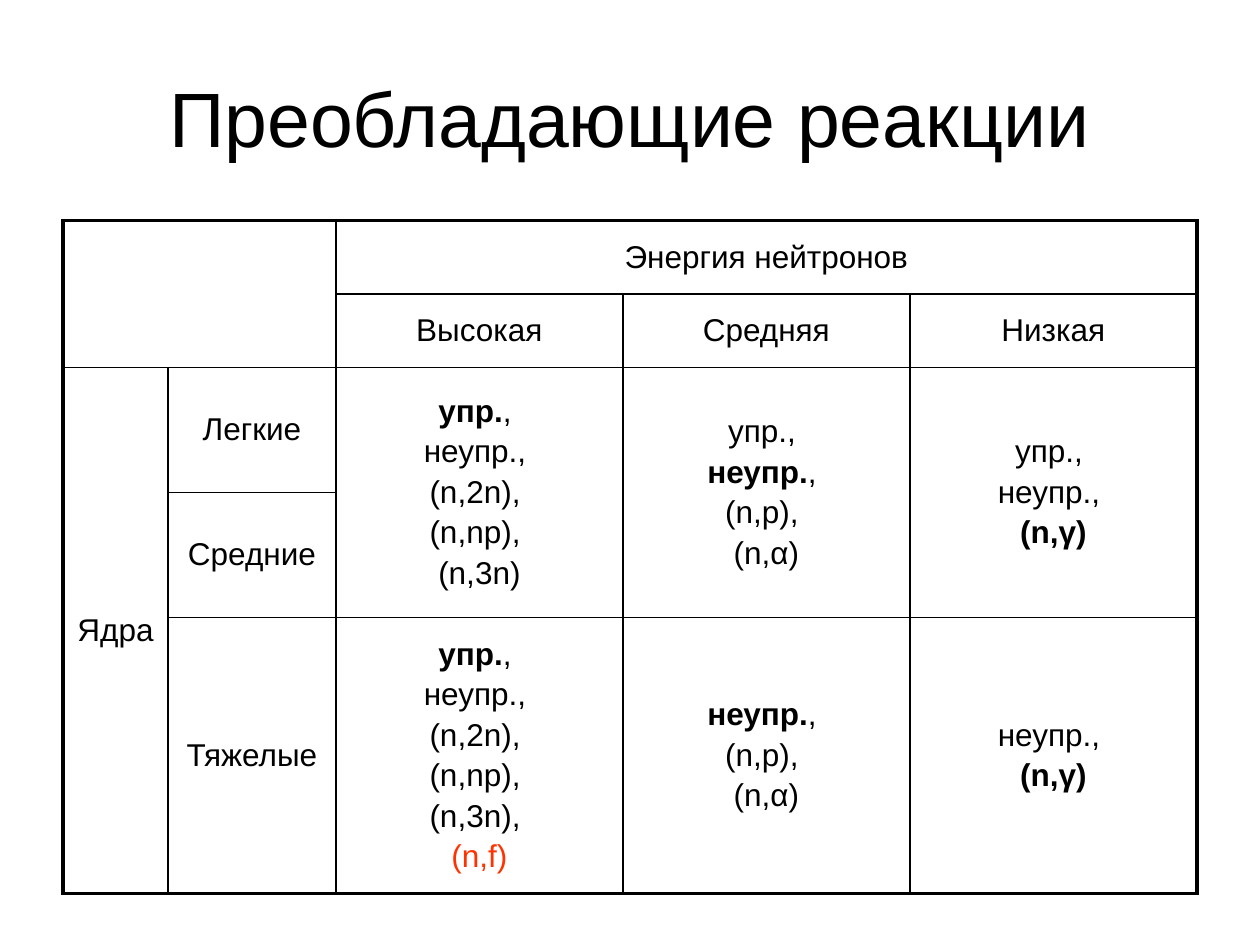
"""Build a slide with a table of prevailing neutron reactions."""
from lxml import etree
from pptx import Presentation
from pptx.dml.color import RGBColor
from pptx.enum import text
from pptx.oxml import ns
from pptx.util import Pt

BLACK = RGBColor(0x00, 0x00, 0x00)
RED = RGBColor(0xFF, 0x33, 0x00)
FONT = "Arial"
THIN, THICK = 1, 2.25
BOLD = "*"
TITLE = "Преобладающие реакции"
FISSION = "(n,f)"
COLS = [60, 96, 164, 164, 164]
ROWS = [42, 42, 71.4, 71.4, 158]

# row, column, row span, column span, lines
BLOCKS = [
    (0, 0, 2, 2, []),
    (0, 2, 1, 3, ["Энергия нейтронов"]),
    (1, 2, 1, 1, ["Высокая"]),
    (1, 3, 1, 1, ["Средняя"]),
    (1, 4, 1, 1, ["Низкая"]),
    (2, 0, 3, 1, ["Ядра"]),
    (2, 1, 1, 1, ["Легкие"]),
    (3, 1, 1, 1, ["Средние"]),
    (4, 1, 1, 1, ["Тяжелые"]),
    (2, 2, 2, 1, ["*упр.*, ", "неупр., ", "(n,2n), ", "(n,np), ", "(n,3n)"]),
    (2, 3, 2, 1, ["упр., ", "*неупр.*, ", "(n,p), ", "(n,α)"]),
    (2, 4, 2, 1, ["упр., ", "неупр., ", "*(n,γ)*"]),
    (4, 2, 1, 1, ["*упр.*, ", "неупр., ", "(n,2n), ", "(n,np), ", "(n,3n), ", FISSION]),
    (4, 3, 1, 1, ["*неупр.*, ", "(n,p), ", "(n,α)"]),
    (4, 4, 1, 1, ["неупр., ", "*(n,γ)*"]),
]


def write(frame, lines, size, gap=0):
    for i, line in enumerate(lines):
        para = frame.paragraphs[0] if i == 0 else frame.add_paragraph()
        para.alignment = text.PP_ALIGN.CENTER
        para.space_before = Pt(gap)
        for k, part in enumerate(line.split(BOLD)):
            if part:
                run = para.add_run()
                run.text = part
                font = run.font
                font.name, font.size, font.bold = FONT, Pt(size), k % 2 == 1
                font.color.rgb = RED if part == FISSION else BLACK


def edge(cell, side, width):
    props = cell._tc.get_or_add_tcPr()
    line = etree.SubElement(props, ns.qn(f"a:ln{side}"), w=str(Pt(width)))
    fill = etree.SubElement(line, ns.qn("a:solidFill"))
    etree.SubElement(fill, ns.qn("a:srgbClr"), val=str(BLACK))


def border(grid, row, col, high, wide):
    end, last = row + high, col + wide
    for r in range(row, end):
        for c in range(col, last):
            cell = grid.cell(r, c)
            first = (r, c) == (row, col)
            sides = [
                ("L", c == col, col == 0),
                ("R", c == last - 1, last == len(COLS)),
                ("T", r == row, row == 0),
                ("B", r == end - 1, end == len(ROWS)),
            ]
            for side, rim, outer in sides:
                if first or rim:
                    edge(cell, side, THICK if outer else THIN)
            cell.fill.background()


def main():
    deck = Presentation()
    deck.slide_width, deck.slide_height = Pt(720), Pt(540)
    slide = deck.slides.add_slide(deck.slide_layouts[6])

    title = slide.shapes.add_textbox(Pt(36), Pt(21.6), Pt(648), Pt(90)).text_frame
    title.word_wrap = True
    title.vertical_anchor = text.MSO_ANCHOR.MIDDLE
    write(title, [TITLE], 44)

    grid = slide.shapes.add_table(
        len(ROWS), len(COLS), Pt(36), Pt(126), Pt(sum(COLS)), Pt(sum(ROWS))
    ).table
    grid.first_row = grid.horz_banding = False
    for col, wide in zip(grid.columns, COLS):
        col.width = Pt(wide)
    for row, high in zip(grid.rows, ROWS):
        row.height = Pt(high)

    for row, col, high, wide, lines in BLOCKS:
        cell = grid.cell(row, col)
        if high * wide > 1:
            cell.merge(grid.cell(row + high - 1, col + wide - 1))
        border(grid, row, col, high, wide)
        cell.vertical_anchor = text.MSO_ANCHOR.MIDDLE
        write(cell.text_frame, lines, 18, 3)

    deck.save("out.pptx")


if __name__ == "__main__":
    main()
